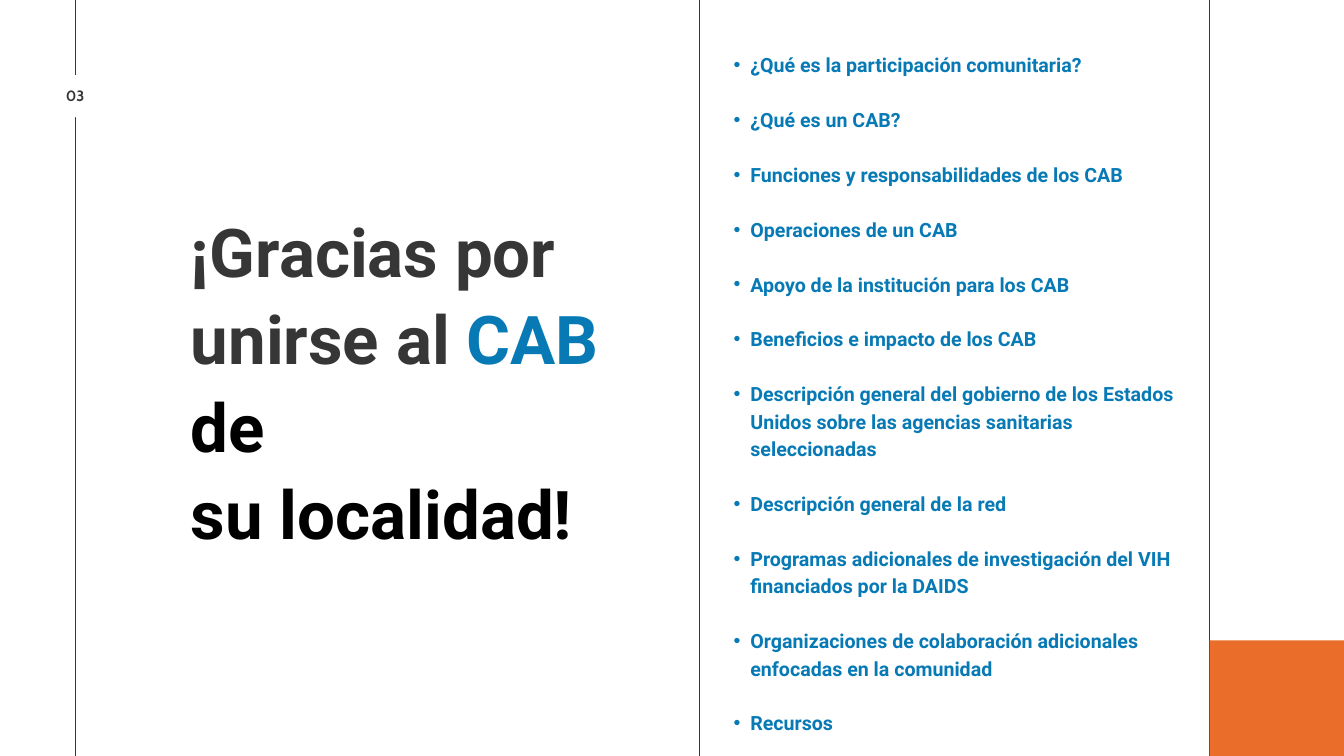
import pptx
import pptx.util
import pptx.dml.color
import pptx.enum.shapes
import pptx.enum.text
import pptx.oxml.ns
from dataclasses import dataclass
from lxml import etree

Pt = pptx.util.Pt
Align = pptx.enum.text.PP_ALIGN


@dataclass(frozen=True)
class Theme:
    dark: str = "373636"
    blue: str = "077AB5"
    orange: str = "EA6D29"
    black: str = "000000"
    white: str = "FFFFFF"
    body_font: str = "Roboto"
    number_font: str = "Cabin"
    title_size: float = 72
    list_size: float = 21
    number_size: float = 16


THEME = Theme()
WIDTH, HEIGHT = 1440, 810
LEFT_RULE, MIDDLE_RULE, RIGHT_RULE = 80.5, 749, 1295.5

TITLE = [[("¡Gracias por unirse al ", THEME.dark), ("CAB", THEME.blue), (" de", THEME.black),
          ("\n", None), ("su localidad!", THEME.black)]]
TOPICS = [
    "¿Qué es la participación comunitaria?",
    "¿Qué es un CAB?",
    "Funciones y responsabilidades de los CAB",
    "Operaciones de un CAB",
    "Apoyo de la institución para los CAB",
    "Beneficios e impacto de los CAB",
    "Descripción general del gobierno de los Estados Unidos sobre las agencias "
    "sanitarias seleccionadas",
    "Descripción general de la red",
    "Programas adicionales de investigación del VIH financiados por la DAIDS",
    "Organizaciones de colaboración adicionales enfocadas en la comunidad",
    "Recursos",
]


def rgb(value):
    return pptx.dml.color.RGBColor.from_string(value)


def place(shape, box):
    shape.left, shape.top, shape.width, shape.height = (Pt(length) for length in box)


def add_bullet(paragraph, margin, hanging):
    properties = paragraph._p.get_or_add_pPr()
    properties.set("marL", str(Pt(margin)))
    properties.set("indent", str(-Pt(hanging)))
    qn = pptx.oxml.ns.qn
    etree.SubElement(properties, qn("a:buFont")).set("typeface", "Arial")
    etree.SubElement(properties, qn("a:buChar")).set("char", "•")


def write_text(shape, paragraphs, *, font, size, line, align=Align.LEFT, gap=0, bullet=False):
    """Fill a shape with paragraphs, each a list of (text, colour) runs."""
    frame = shape.text_frame
    frame.word_wrap = True
    frame.auto_size = pptx.enum.text.MSO_AUTO_SIZE.NONE
    frame.vertical_anchor = pptx.enum.text.MSO_ANCHOR.TOP
    frame.margin_left = frame.margin_top = frame.margin_right = frame.margin_bottom = 0
    for index, runs in enumerate(paragraphs):
        paragraph = frame.add_paragraph() if index else frame.paragraphs[0]
        if bullet:
            add_bullet(paragraph, margin=36, hanging=18)
        paragraph.alignment = align
        paragraph.line_spacing = Pt(line)
        paragraph.space_before = Pt(gap if index else 0)
        paragraph.space_after = Pt(0)
        for text, color in runs:
            if text == "\n":
                paragraph.add_line_break()
                continue
            run = paragraph.add_run()
            run.text = text
            run.font.name, run.font.size, run.font.bold = font, Pt(size), True
            run.font.color.rgb = rgb(color)


def add_block(shapes, box, color):
    block = shapes.add_shape(pptx.enum.shapes.MSO_SHAPE.RECTANGLE,
                             *(Pt(length) for length in box))
    block.shadow.inherit = False
    block.fill.solid()
    block.fill.fore_color.rgb = rgb(color)
    block.line.fill.background()


def add_rule(slide, x):
    rule = slide.shapes.add_connector(pptx.enum.shapes.MSO_CONNECTOR.STRAIGHT,
                                      Pt(x), Pt(0), Pt(x), Pt(HEIGHT))
    rule.line.color.rgb = rgb(THEME.dark)
    rule.line.width = Pt(0.75)
    etree.SubElement(rule._element.spPr, pptx.oxml.ns.qn("a:effectLst"))


def add_page_number(slide, box, number):
    """White gap in the left rule with the page number inside it."""
    left, top, width, height = box
    group = slide.shapes.add_group_shape()
    add_block(group.shapes, box, THEME.white)
    label = group.shapes.add_textbox(Pt(left + 5), Pt(top + 13.5), Pt(width - 10), Pt(19))
    write_text(label, [[(number, THEME.dark)]], font=THEME.number_font,
               size=THEME.number_size, line=17.6, align=Align.CENTER)


def add_title(slide, box):
    title = slide.shapes.title
    place(title, box)
    write_text(title, TITLE, font=THEME.body_font, size=THEME.title_size, line=93.6)


def add_topics(slide, box):
    body = slide.placeholders[1]
    place(body, box)
    write_text(body, [[(topic, THEME.blue)] for topic in TOPICS], font=THEME.body_font,
               size=THEME.list_size, line=29.4, gap=29.4, bullet=True)


def main():
    presentation = pptx.Presentation()
    presentation.slide_width, presentation.slide_height = Pt(WIDTH), Pt(HEIGHT)
    slide = presentation.slides.add_slide(presentation.slide_layouts[1])

    # Frame: vertical rules and the corner block
    for x in (LEFT_RULE, MIDDLE_RULE, RIGHT_RULE):
        add_rule(slide, x)
    add_block(slide.shapes, (1296, 686, 144, 124), THEME.orange)
    add_page_number(slide, (49.5, 80.5, 62, 45), "03")

    # Text: thanks on the left, topics on the right
    add_title(slide, (204.5, 218, 487, 369.5))
    add_topics(slide, (768, 52.5, 508.5, 701.5))

    presentation.save("out.pptx")


if __name__ == "__main__":
    main()
